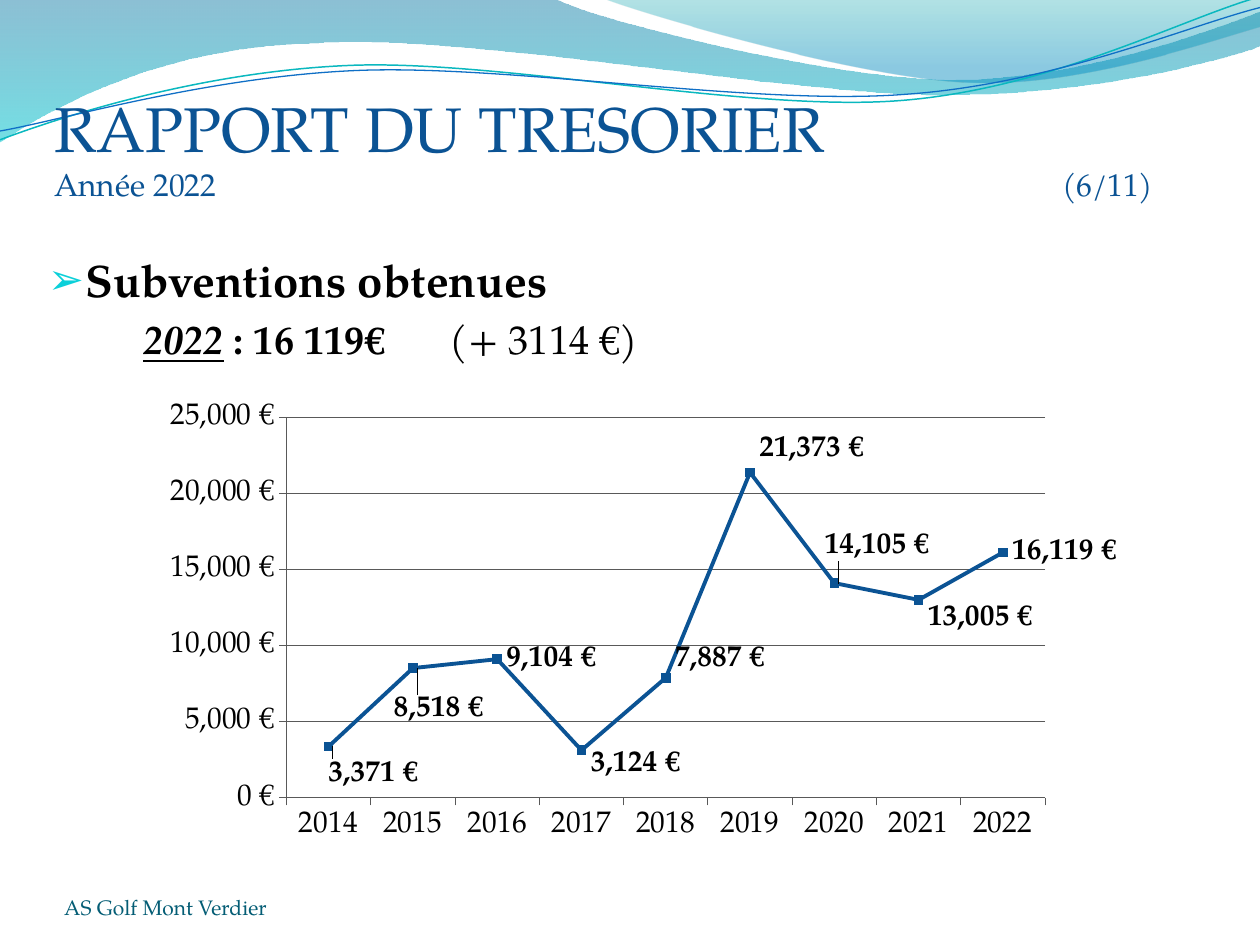
from lxml.etree import SubElement
from pptx import Presentation
from pptx.chart.data import CategoryChartData
from pptx.dml.color import RGBColor
from pptx.enum.chart import XL_CHART_TYPE as ChartType, XL_LABEL_POSITION as LabelPos
from pptx.enum.chart import XL_MARKER_STYLE as Marker, XL_TICK_MARK as Tick
from pptx.enum.text import MSO_ANCHOR as Anchor, MSO_AUTO_SIZE as AutoSize, PP_ALIGN as Align
from pptx.oxml import parse_xml
from pptx.oxml.ns import nsdecls, qn
from pptx.util import Inches, Pt

COLORS = {"title": "0B5394", "text": "000000", "bullet": "0BD0D9", "footer": "045D75",
          "series": "0B5394", "grid": "595959", "teal_line": "0AB8BF", "blue_line": "0F6FC6",
          "sea": "0074A1", "aqua": "00C6CF", "lagoon": "00A1A9", "sky": "008BBF"}
FONT = "TeX Gyre Pagella"
EURO = '#,##0\\ "€"'
CHART_TEXT = 17

# Waves: a start point, then segments of one point (line) or three (Bézier curve)
LEFT_WAVE = [(0, 0), [(4.4, -0.01)],
             [(4.76, 0.17), (6.64, 0.63), (7.58, 0.63)],
             [(8.53, 0.63), (9.58, 0.26), (10, 0.09)], [(10.01, 0.36)],
             [(9.83, 0.44), (8.7, 0.76), (7.46, 0.75)],
             [(6.22, 0.75), (3.82, 0.28), (2.57, 0.34)],
             [(1.29, 0.36), (0.46, 0.83), (-0.01, 1.13)]]
RIGHT_WAVE = [(4.79, -0.01), [(5.09, 0.11), (6.82, 0.62), (7.69, 0.65)],
              [(8.56, 0.69), (9.61, 0.32), (10, 0.21)], [(10, 0)]]
TEAL_WAVE = [(0, 1.11), [(0.48, 0.93), (1.58, 0.57), (2.77, 0.52)],
             [(3.95, 0.47), (5.93, 0.89), (7.13, 0.8)],
             [(8.33, 0.71), (9.38, 0.15), (9.98, -0.02)]]
BLUE_WAVE = [(0, 1.04), [(0.47, 0.96), (1.64, 0.61), (2.83, 0.56)],
             [(4.03, 0.51), (5.97, 0.84), (7.17, 0.75)],
             [(8.36, 0.67), (9.41, 0.21), (10, 0.06)]]

GRANTS = {"2014": 3371, "2015": 8518, "2016": 9104, "2017": 3124, "2018": 7887,
          "2019": 21373, "2020": 14105, "2021": 13005, "2022": 16119}
# Label shifts as fractions of the chart, from the place right of the point
LABEL_SHIFTS = {"2014": (-0.01, 0.06), "2015": (-0.03, 0.09), "2017": (0, 0.03),
                "2018": (0, -0.04), "2019": (0, -0.05), "2020": (-0.02, -0.08),
                "2021": (0, 0.04)}


def rgb(name):
    return RGBColor.from_string(COLORS[name])


def manual_layout(**values):
    items = "".join(f'<c:{key} val="{value}"/>' for key, value in values.items())
    return parse_xml(f'<c:layout {nsdecls("c")}><c:manualLayout>{items}</c:manualLayout></c:layout>')


def hide_leader_lines(labels):
    labels._element.append(parse_xml(
        f'<c:extLst {nsdecls("c")}><c:ext uri="{{CE6537A1-D6FC-4f65-9D91-7224C49458BB}}" '
        'xmlns:c15="http://schemas.microsoft.com/office/drawing/2012/chart">'
        '<c15:showLeaderLines val="0"/></c:ext></c:extLst>'))


class SlideBuilder:
    def __init__(self, slide):
        self.slide = slide

    def style(self, font, size, color, **flags):
        font.name, font.size, font.color.rgb = FONT, Pt(size), rgb(color)
        for flag, value in flags.items():
            setattr(font, flag, value)

    def run(self, paragraph, text, size, color, **flags):
        run = paragraph.add_run()
        run.text = text
        self.style(run.font, size, color, **flags)

    def indent(self, paragraph, left, first):
        props = paragraph._p.get_or_add_pPr()
        props.set("marL", str(Inches(left)))
        props.set("indent", str(Inches(first)))
        return props

    def place(self, shape, box, anchor, margins):
        shape.left, shape.top, shape.width, shape.height = map(Inches, box)
        frame = shape.text_frame
        frame.word_wrap, frame.auto_size, frame.vertical_anchor = True, AutoSize.NONE, anchor
        (frame.margin_left, frame.margin_top,
         frame.margin_right, frame.margin_bottom) = map(Inches, margins)
        return frame

    def outline(self, path, closed):
        """Build a freeform through the segment ends, then bend its curved segments."""
        start, *segments = path
        builder = self.slide.shapes.build_freeform(*map(Inches, start))
        builder.add_line_segments([tuple(map(Inches, s[-1])) for s in segments], close=closed)
        shape = builder.convert_to_shape()
        for step, segment in zip(list(shape._element.iter(qn("a:lnTo"))), segments):
            if len(segment) == 3:
                curve = SubElement(step.getparent(), qn("a:cubicBezTo"))
                for x, y in segment:
                    SubElement(curve, qn("a:pt"), x=str(Inches(x) - shape.left),
                               y=str(Inches(y) - shape.top))
                step.getparent().replace(step, curve)
        return shape

    def wave(self, path, stops=None, line=None):
        """Draw a wave behind the text, with gradient stops or a (colour, width) line."""
        shape = self.outline(path, closed=bool(stops))
        shape.shadow.inherit = False
        if stops:
            shape.fill.gradient()
            shape.fill.gradient_angle = 270
            for stop, (position, color, _) in zip(shape.fill.gradient_stops, stops):
                stop.position, stop.color.rgb = position, rgb(color)
            for hue, stop in zip(shape._element.spPr.iter(qn("a:srgbClr")), stops):
                SubElement(hue, qn("a:alpha"), val=str(stop[2] * 1000))
            shape.line.fill.background()
        else:
            shape.fill.background()
            shape.line.color.rgb, shape.line.width = rgb(line[0]), Pt(line[1])
        self.slide.shapes.title._element.addprevious(shape._element)

    def title(self, heading, year, page):
        frame = self.place(self.slide.shapes.title, (0.43, 0.36, 9, 1.25),
                           Anchor.BOTTOM, (0, 0.05, 0, 0))
        paragraph = frame.paragraphs[0]
        paragraph.alignment = Align.LEFT
        tabs = SubElement(paragraph._p.get_or_add_pPr(), qn("a:tabLst"))
        SubElement(tabs, qn("a:tab"), pos=str(Inches(8)), algn="l")
        self.run(paragraph, heading, 36, "title")
        paragraph.add_line_break()
        self.run(paragraph, f"{year}\t{page}", 18, "title")

    def body(self, heading, year, amount, change):
        frame = self.place(self.slide.placeholders[1], (0.28, 1.95, 9.22, 1.01),
                           Anchor.TOP, (0.1, 0.05, 0.1, 0.05))
        topic = frame.paragraphs[0]
        props = self.indent(topic, 0.3, -0.3)
        SubElement(SubElement(props, qn("a:buClr")), qn("a:srgbClr"), val=COLORS["bullet"])
        SubElement(props, qn("a:buSzPct"), val="95000")
        SubElement(props, qn("a:buChar"), char="➢")
        topic.space_before = Pt(0)
        self.run(topic, heading, 26, "text", bold=True)

        detail = frame.add_paragraph()
        detail.level = 1
        SubElement(self.indent(detail, 0.69, 0), qn("a:buNone"))
        detail.space_before = Pt(4.6)
        self.run(detail, " ", 19, "text", bold=True)
        self.run(detail, year, 23, "text", bold=True, italic=True, underline=True)
        self.run(detail, f" : {amount} ", 23, "text", bold=True)
        self.run(detail, f"\t{change}", 23, "text", bold=False)

    def footer(self, text):
        box = (0.51, 6.98, 1.89, 0.32)
        frame = self.place(self.slide.shapes.add_textbox(*map(Inches, box)), box,
                           Anchor.BOTTOM, (0, 0, 0, 0))
        self.run(frame.paragraphs[0], text, 12, "footer")

    def line_chart(self, values, shifts):
        data = CategoryChartData(number_format=EURO)
        data.categories = list(values)
        data.add_series("Series 1", list(values.values()))
        chart = self.slide.shapes.add_chart(
            ChartType.LINE_MARKERS_STACKED, *map(Inches, (1.22, 3.13, 7.64, 3.64)), data).chart
        chart.has_legend = chart.has_title = False
        self.style(chart.font, CHART_TEXT, "text")
        plot_area = chart._chartSpace.chart.plotArea
        for layout in plot_area.findall(qn("c:layout")):
            plot_area.remove(layout)
        plot_area.insert(0, manual_layout(layoutTarget="inner", xMode="edge", yMode="edge",
                                          x=0.14, y=0.05, w=0.8, h=0.83))

        amounts = chart.value_axis
        amounts.minimum_scale, amounts.maximum_scale, amounts.major_unit = 0, 25000, 5000
        amounts.tick_labels.number_format = EURO
        amounts.tick_labels.number_format_is_linked = False
        amounts.has_major_gridlines = True
        for axis in (amounts, chart.category_axis):
            axis.major_tick_mark, axis.minor_tick_mark = Tick.OUTSIDE, Tick.NONE
        for line in (amounts.major_gridlines.format.line, amounts.format.line,
                     chart.category_axis.format.line):
            line.color.rgb, line.width = rgb("grid"), Pt(0.5)

        chart.plots[0].vary_by_categories = False
        series = chart.plots[0].series[0]
        series.smooth = False
        series.format.line.color.rgb, series.format.line.width = rgb("series"), Pt(2.25)
        series.marker.style, series.marker.size = Marker.SQUARE, 5
        series.marker.format.fill.solid()
        series.marker.format.fill.fore_color.rgb = rgb("series")
        series.marker.format.line.fill.background()

        labels = series.data_labels
        labels.show_value, labels.position = True, LabelPos.RIGHT
        labels.number_format, labels.number_format_is_linked = EURO, False
        self.style(labels.font, CHART_TEXT, "text", bold=True)
        for index, year in enumerate(values):
            if year in shifts:
                label = series.points[index].data_label
                label.position = LabelPos.RIGHT
                self.style(label.font, CHART_TEXT, "text", bold=True)
                x, y = shifts[year]
                label._dLbl.find(qn("c:idx")).addnext(manual_layout(x=x, y=y))
        hide_leader_lines(labels)


def main():
    deck = Presentation()
    deck.slide_width, deck.slide_height = Inches(10), Inches(7.5)
    page = SlideBuilder(deck.slides.add_slide(deck.slide_layouts[1]))
    page.wave(LEFT_WAVE, stops=[(0, "sea", 45), (1, "aqua", 55)])
    page.wave(RIGHT_WAVE, stops=[(0, "lagoon", 30), (0.8, "sky", 45)])
    page.wave(TEAL_WAVE, line=("teal_line", 0.85))
    page.wave(BLUE_WAVE, line=("blue_line", 0.75))
    page.title("RAPPORT DU TRESORIER", "Année 2022", "(6/11)")
    page.body("Subventions obtenues", "2022", "16 119€", "(+ 3114 €)")
    page.line_chart(GRANTS, LABEL_SHIFTS)
    page.footer("AS Golf Mont Verdier")
    deck.save("out.pptx")


if __name__ == "__main__":
    main()
